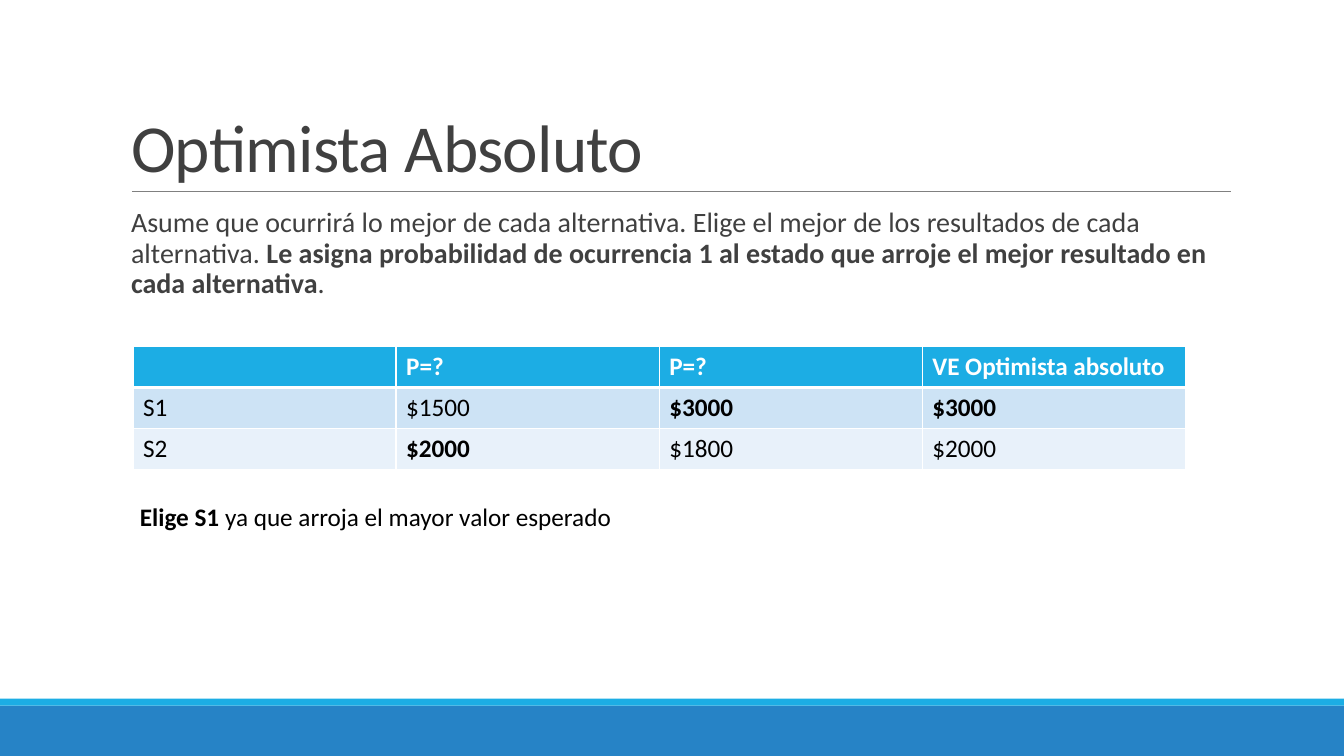
from dataclasses import dataclass

from lxml.etree import SubElement
from pptx import Presentation
from pptx.dml.color import RGBColor
from pptx.enum.shapes import MSO_CONNECTOR, MSO_SHAPE
from pptx.enum.text import MSO_ANCHOR, MSO_AUTO_SIZE, PP_ALIGN
from pptx.oxml.ns import qn
from pptx.util import Pt

TITLE = "Optimista Absoluto"
EXPLANATION = [
    ("Asume que ocurrirá lo mejor de cada alternativa. Elige el mejor de los resultados de cada alternativa. ", False),
    ("Le asigna probabilidad de ocurrencia 1 al estado que arroje el mejor resultado en cada alternativa", True),
    (".", False),
]
PAYOFFS = [
    ["", "P=?", "P=?", "VE Optimista absoluto"],
    ["S1", "$1500", "$3000", "$3000"],
    ["S2", "$2000", "$1800", "$2000"],
]
BEST_CELLS = {(1, 2), (1, 3), (2, 1)}
CONCLUSION = [("Elige S1", True), (" ya que arroja el mayor valor esperado", False)]


@dataclass(frozen=True)
class Theme:
    font: str = "Calibri"
    title_size: int = 48
    body_size: int = 20
    table_size: int = 18
    heading: str = "404040"
    text: str = "000000"
    white: str = "FFFFFF"
    accent: str = "1CADE4"
    footer: str = "2683C6"
    rule: str = "808080"
    row_fills: tuple = ("1CADE4", "CDE3F5", "E8F1FA")


THEME = Theme()
SLIDE_WIDTH, SLIDE_HEIGHT = 960, 540
TITLE_BOX = (86.4, 22.5, 792, 114.3)
BODY_BOX = (86.4, 145.4, 792, 316.8)
TABLE_LEFT, TABLE_TOP = 95, 247.7
COLUMN_WIDTH, ROW_HEIGHT = 187.95, 29.2
CONCLUSION_BOX = (92.9, 354.3, 727.2, 29.1)
RULE_LEFT, RULE_RIGHT, RULE_TOP = 94.3, 879.1, 136.9
FOOTER_HEIGHT, STRIPE_HEIGHT = 36, 5


def color(value):
    return RGBColor.from_string(value)


def style(paragraph, size, text_color, bold=None):
    font = paragraph.font
    font.name, font.size, font.bold = THEME.font, Pt(size), bold
    font.color.rgb = color(text_color)


def place(shape, box):
    shape.left, shape.top, shape.width, shape.height = map(Pt, box)


def write_runs(paragraph, runs):
    for text, bold in runs:
        run = paragraph.add_run()
        run.text = text
        run.font.bold = bold


def add_title(slide):
    title = slide.shapes.title
    place(title, TITLE_BOX)
    frame = title.text_frame
    frame.text = TITLE
    frame.vertical_anchor = MSO_ANCHOR.BOTTOM
    frame.auto_size = MSO_AUTO_SIZE.NONE
    paragraph = frame.paragraphs[0]
    paragraph.alignment = PP_ALIGN.LEFT
    paragraph.line_spacing = 0.85
    style(paragraph, THEME.title_size, THEME.heading)
    paragraph.runs[0].font._element.set("spc", "-50")


def add_explanation(slide):
    body = slide.placeholders[1]
    place(body, BODY_BOX)
    frame = body.text_frame
    frame.auto_size = MSO_AUTO_SIZE.NONE
    frame.margin_left = frame.margin_right = 0
    paragraph = frame.paragraphs[0]
    properties = paragraph._p.get_or_add_pPr()
    properties.set("marL", str(Pt(7.2)))
    properties.set("indent", str(-Pt(7.2)))
    bullet_color = SubElement(properties, qn("a:buClr"))
    SubElement(bullet_color, qn("a:srgbClr"), val=THEME.accent)
    SubElement(properties, qn("a:buFont"), typeface=THEME.font)
    SubElement(properties, qn("a:buChar"), char=" ")
    paragraph.line_spacing = 0.9
    paragraph.space_before, paragraph.space_after = Pt(12), Pt(2)
    style(paragraph, THEME.body_size, THEME.heading)
    write_runs(paragraph, EXPLANATION)


def set_borders(cell, row):
    properties = cell._tc.get_or_add_tcPr()
    widths = {"L": 1, "R": 1, "T": 3 if row == 1 else 1, "B": 3 if row == 0 else 1}
    for side, width in widths.items():
        line = SubElement(properties, qn(f"a:ln{side}"), w=str(Pt(width)))
        fill = SubElement(line, qn("a:solidFill"))
        SubElement(fill, qn("a:srgbClr"), val=THEME.white)


def add_payoff_table(slide):
    row_count, column_count = len(PAYOFFS), len(PAYOFFS[0])
    table = slide.shapes.add_table(
        row_count, column_count, Pt(TABLE_LEFT), Pt(TABLE_TOP),
        Pt(COLUMN_WIDTH * column_count), Pt(ROW_HEIGHT * row_count),
    ).table
    for row, values in enumerate(PAYOFFS):
        for column, value in enumerate(values):
            cell = table.cell(row, column)
            cell.text = value
            set_borders(cell, row)
            cell.fill.solid()
            cell.fill.fore_color.rgb = color(THEME.row_fills[row])
            text_color = THEME.white if row == 0 else THEME.text
            bold = row == 0 or (row, column) in BEST_CELLS
            style(cell.text_frame.paragraphs[0], THEME.table_size, text_color, bold)


def add_conclusion(slide):
    frame = slide.shapes.add_textbox(*map(Pt, CONCLUSION_BOX)).text_frame
    frame.word_wrap = True
    frame.auto_size = MSO_AUTO_SIZE.SHAPE_TO_FIT_TEXT
    paragraph = frame.paragraphs[0]
    style(paragraph, THEME.table_size, THEME.text)
    write_runs(paragraph, CONCLUSION)


def add_rule(slide):
    rule = slide.shapes.add_connector(
        MSO_CONNECTOR.STRAIGHT, Pt(RULE_LEFT), Pt(RULE_TOP), Pt(RULE_RIGHT), Pt(RULE_TOP)
    )
    rule.line.color.rgb = color(THEME.rule)
    rule.line.width = Pt(0.5)
    SubElement(rule._element.spPr, qn("a:effectLst"))


def add_band(slide, top, height, fill):
    band = slide.shapes.add_shape(MSO_SHAPE.RECTANGLE, 0, Pt(top), Pt(SLIDE_WIDTH), Pt(height))
    band.shadow.inherit = False
    band.fill.solid()
    band.fill.fore_color.rgb = color(fill)
    band.line.fill.background()


def main():
    presentation = Presentation()
    presentation.slide_width, presentation.slide_height = Pt(SLIDE_WIDTH), Pt(SLIDE_HEIGHT)
    slide = presentation.slides.add_slide(presentation.slide_layouts[1])
    footer_top = SLIDE_HEIGHT - FOOTER_HEIGHT
    add_band(slide, footer_top, FOOTER_HEIGHT, THEME.footer)
    add_band(slide, footer_top - STRIPE_HEIGHT, STRIPE_HEIGHT, THEME.accent)
    add_rule(slide)
    add_title(slide)
    add_explanation(slide)
    add_payoff_table(slide)
    add_conclusion(slide)
    presentation.save("out.pptx")


if __name__ == "__main__":
    main()
